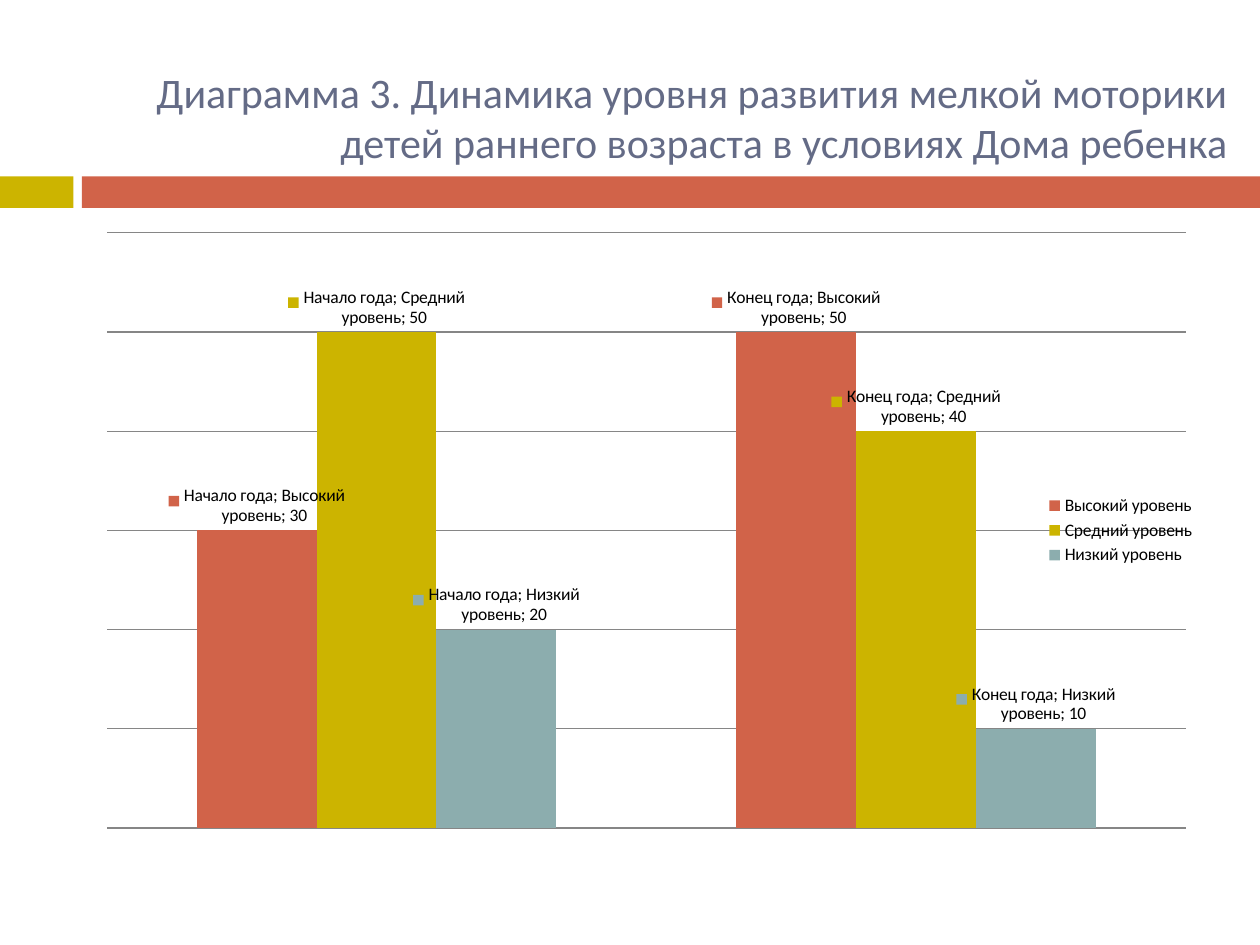
from lxml import etree
from pptx import Presentation
from pptx.chart.data import CategoryChartData
from pptx.dml.color import RGBColor
from pptx.enum.chart import XL_CHART_TYPE, XL_LABEL_POSITION, XL_LEGEND_POSITION
from pptx.enum.shapes import MSO_SHAPE
from pptx.enum.text import MSO_ANCHOR, PP_ALIGN
from pptx.oxml.ns import qn
from pptx.util import Pt

COLUMNS = XL_CHART_TYPE.COLUMN_CLUSTERED
OUTSIDE_END = XL_LABEL_POSITION.OUTSIDE_END
LEGEND_RIGHT = XL_LEGEND_POSITION.RIGHT
RECT = MSO_SHAPE.RECTANGLE
MIDDLE = MSO_ANCHOR.MIDDLE
LEFT, RIGHT = PP_ALIGN.LEFT, PP_ALIGN.RIGHT

FONT = "Calibri"
RED, YELLOW, TEAL = "D16349", "CCB400", "8CADAE"
SLATE, GREY, BLACK = "646B86", "868686", "000000"

TITLE = ("Диаграмма 3. Динамика уровня развития мелкой моторики "
         "детей раннего возраста в условиях Дома ребенка")
PERIODS = ["Начало года", "Конец года"]
LEVELS = [
    ("Высокий уровень", (30, 50), RED),
    ("Средний уровень", (50, 40), YELLOW),
    ("Низкий уровень", (20, 10), TEAL),
]


def rgb(value):
    return RGBColor.from_string(value)


def style_font(font, size, color):
    font.name = FONT
    font.size = Pt(size)
    font.color.rgb = rgb(color)


def add_text(s, text, box, size=18, color=BLACK, align=LEFT, anchor=MIDDLE):
    tf = s.shapes.add_textbox(*map(Pt, box)).text_frame
    tf.word_wrap = True
    tf.vertical_anchor = anchor
    p = tf.paragraphs[0]
    p.alignment = align
    r = p.add_run()
    r.text = text
    style_font(r.font, size, color)


def add_bar(s, box, color):
    sp = s.shapes.add_shape(RECT, *map(Pt, box))
    sp.shadow.inherit = False
    sp.fill.solid()
    sp.fill.fore_color.rgb = rgb(color)
    sp.line.fill.background()


def add_band(s, box, tab=42, gap=4.8):
    """Draw a short yellow tab, a gap and a red bar that fills the rest."""
    x, y, w, h = box
    add_bar(s, (x, y, tab, h), YELLOW)
    add_bar(s, (x + tab + gap, y, w - tab - gap, h), RED)


def label_columns(series):
    """Label each column with its key, period, level and value."""
    labels = series.data_labels
    labels.show_legend_key = True
    labels.show_category_name = True
    labels.show_series_name = True
    labels.show_value = True
    labels.position = OUTSIDE_END
    style_font(labels.font, 10, BLACK)
    separator = etree.Element(qn("c:separator"))
    separator.text = "; "
    labels._element.find(qn("c:showBubbleSize")).addnext(separator)


def add_level_chart(s, box):
    data = CategoryChartData()
    data.categories = PERIODS
    for name, values, _ in LEVELS:
        data.add_series(name, values)
    chart = s.shapes.add_chart(COLUMNS, *map(Pt, box), data).chart
    style_font(chart.font, 10, BLACK)
    chart.has_title = False
    chart.has_legend = True
    chart.legend.position = LEGEND_RIGHT
    chart.legend.include_in_layout = True
    style_font(chart.legend.font, 10, BLACK)

    chart.category_axis.visible = False
    axis = chart.value_axis
    axis.visible = False
    axis.minimum_scale, axis.maximum_scale, axis.major_unit = 0, 60, 10
    axis.has_major_gridlines = True
    line = axis.major_gridlines.format.line
    line.color.rgb = rgb(GREY)
    line.width = Pt(0.75)

    plot = chart.plots[0]
    plot.gap_width = 150
    plot.overlap = 0
    plot.vary_by_categories = False
    for series, (_, _, color) in zip(plot.series, LEVELS):
        series.format.fill.solid()
        series.format.fill.fore_color.rgb = rgb(color)
        label_columns(series)


def main():
    prs = Presentation()
    prs.slide_width, prs.slide_height = Pt(720), Pt(540)
    s = prs.slides.add_slide(prs.slide_layouts[6])
    add_band(s, (0, 100.8, 720, 18))
    add_text(s, TITLE, (36, 21.6, 672.5, 90), size=24, color=SLATE, align=RIGHT)
    add_level_chart(s, (48.2, 126, 642.2, 354.2))
    prs.save("out.pptx")


if __name__ == "__main__":
    main()
